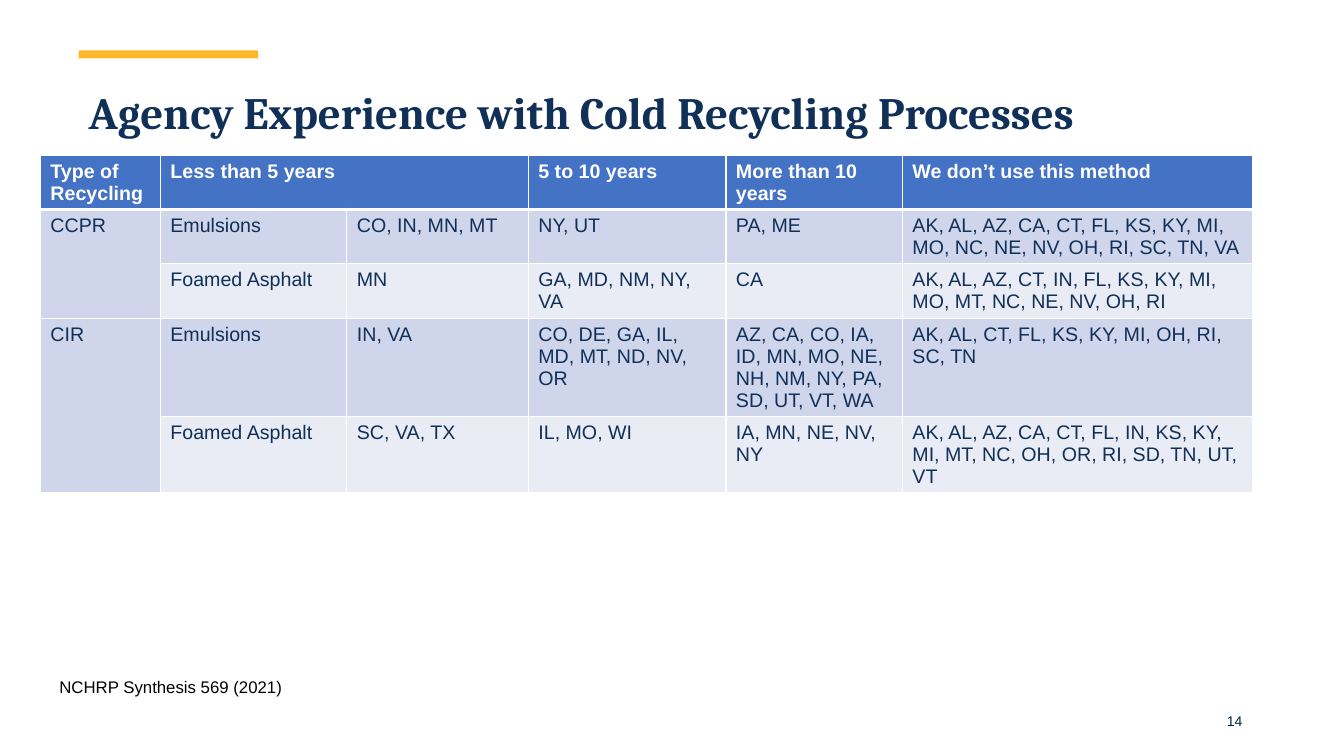
from pptx import Presentation
from pptx.dml.color import RGBColor
from pptx.enum.shapes import MSO_SHAPE
from pptx.enum.text import MSO_ANCHOR, PP_ALIGN
from pptx.oxml import parse_xml
from pptx.oxml.ns import nsdecls
from pptx.util import Inches, Pt

NAVY = RGBColor(0x10, 0x30, 0x58)
DARK_TEAL = RGBColor(0x00, 0x26, 0x3A)
GOLD = RGBColor(0xFD, 0xB7, 0x27)
BLUE = RGBColor(0x44, 0x72, 0xC4)
BAND_DARK = RGBColor(0xCF, 0xD5, 0xEA)
BAND_LIGHT = RGBColor(0xE9, 0xEB, 0xF5)
WHITE = RGBColor(0xFF, 0xFF, 0xFF)
BLACK = RGBColor(0x00, 0x00, 0x00)

TITLE_FONT = {"name": "Cambria", "size": Pt(32), "bold": True}
HEADER_FONT = {"name": "Arial", "size": Pt(14), "bold": True}
BODY_FONT = {"name": "Arial", "size": Pt(14), "bold": False}
SOURCE_FONT = {"name": "Arial", "size": Pt(12)}
NUMBER_FONT = {"name": "Arial", "size": Pt(10)}

COL_WIDTHS = [1.19, 1.85, 1.8, 1.96, 1.75, 3.47]
ROW_HEIGHTS = [0.53, 0.54, 0.54, 0.97, 0.75]
ROWS = [
    ["Type of Recycling", "Less than 5 years", "", "5 to 10 years",
     "More than 10 years", "We don’t use this method"],
    ["CCPR", "Emulsions", "CO, IN, MN, MT", "NY, UT", "PA, ME",
     "AK, AL, AZ, CA, CT, FL, KS, KY, MI, MO, NC, NE, NV, OH, RI, SC, TN, VA"],
    ["", "Foamed Asphalt", "MN", "GA, MD, NM, NY, VA", "CA",
     "AK, AL, AZ, CT, IN, FL, KS, KY, MI, MO, MT, NC, NE, NV, OH, RI"],
    ["CIR", "Emulsions", "IN, VA", "CO, DE, GA, IL, MD, MT, ND, NV, OR",
     "AZ, CA, CO, IA, ID, MN, MO, NE, NH, NM, NY, PA, SD, UT, VT, WA",
     "AK, AL, CT, FL, KS, KY, MI, OH, RI, SC, TN"],
    ["", "Foamed Asphalt", "SC, VA, TX", "IL, MO, WI", "IA, MN, NE, NV, NY",
     "AK, AL, AZ, CA, CT, FL, IN, KS, KY, MI, MT, NC, OH, OR, RI, SD, TN, UT, VT"],
]
# (first row, first column, last row, last column)
MERGES = [(0, 1, 0, 2), (1, 0, 2, 0), (3, 0, 4, 0)]


def write(tf, text, font, color, align=PP_ALIGN.LEFT):
    p = tf.paragraphs[0]
    p.alignment = align
    r = p.add_run()
    r.text = text
    for name, value in font.items():
        setattr(r.font, name, value)
    r.font.color.rgb = color


def set_borders(cell, row):
    widths = {"L": 1, "R": 1, "T": 3 if row == 1 else 1, "B": 3 if row == 0 else 1}
    tcPr = cell._tc.get_or_add_tcPr()
    for side, width in widths.items():
        tcPr.append(parse_xml(
            f'<a:ln{side} {nsdecls("a")} w="{Pt(width)}"><a:solidFill>'
            f'<a:srgbClr val="{WHITE}"/></a:solidFill></a:ln{side}>'))


def add_heading(slide, left, top, width, height):
    # Gold accent bar
    sp = slide.shapes.add_shape(MSO_SHAPE.RECTANGLE, left, top, Inches(1.78), Inches(0.08))
    sp.shadow.inherit = False
    sp.fill.solid()
    sp.fill.fore_color.rgb = GOLD
    sp.line.fill.background()

    # Title below the bar
    title = slide.shapes.title
    offset = Inches(0.32)
    title.left, title.top = left, top + offset
    title.width, title.height = width, height - offset
    tf = title.text_frame
    tf.vertical_anchor = MSO_ANCHOR.MIDDLE
    write(tf, "Agency Experience with Cold Recycling Processes", TITLE_FONT, NAVY)
    tf.paragraphs[0].line_spacing = 0.9


def add_experience_table(slide, left, top):
    frame = slide.shapes.add_table(len(ROWS), len(COL_WIDTHS), left, top,
                                   Inches(sum(COL_WIDTHS)), Inches(sum(ROW_HEIGHTS)))
    table = frame.table
    for column, width in zip(table.columns, COL_WIDTHS):
        column.width = Inches(width)
    for row, height in zip(table.rows, ROW_HEIGHTS):
        row.height = Inches(height)

    for i, texts in enumerate(ROWS):
        for j, text in enumerate(texts):
            cell = table.cell(i, j)
            set_borders(cell, i)
            cell.fill.solid()
            if i == 0:
                fill, font, color = BLUE, HEADER_FONT, WHITE
            else:
                fill = BAND_DARK if i % 2 or j == 0 else BAND_LIGHT
                font, color = BODY_FONT, NAVY
            cell.fill.fore_color.rgb = fill
            if text:
                write(cell.text_frame, text, font, color)

    for r1, c1, r2, c2 in MERGES:
        table.cell(r1, c1).merge(table.cell(r2, c2))


def add_label(slide, left, top, width, height, text, font, color,
              align=PP_ALIGN.LEFT, anchor=MSO_ANCHOR.TOP):
    tf = slide.shapes.add_textbox(left, top, width, height).text_frame
    tf.word_wrap = True
    tf.vertical_anchor = anchor
    write(tf, text, font, color, align)


def main():
    prs = Presentation()
    prs.slide_width, prs.slide_height = Inches(13.33), Inches(7.5)
    slide = prs.slides.add_slide(prs.slide_layouts[5])

    add_heading(slide, Inches(0.78), Inches(0.5), Inches(12.55), Inches(0.97))
    add_experience_table(slide, Inches(0.4), Inches(1.54))
    # Slide number and source
    add_label(slide, Inches(11.74), Inches(6.95), Inches(0.68), Inches(0.4),
              "14", NUMBER_FONT, DARK_TEAL, PP_ALIGN.RIGHT, MSO_ANCHOR.MIDDLE)
    add_label(slide, Inches(0.49), Inches(6.66), Inches(7.28), Inches(0.3),
              "NCHRP Synthesis 569 (2021)", SOURCE_FONT, BLACK)

    prs.save("out.pptx")


if __name__ == "__main__":
    main()
